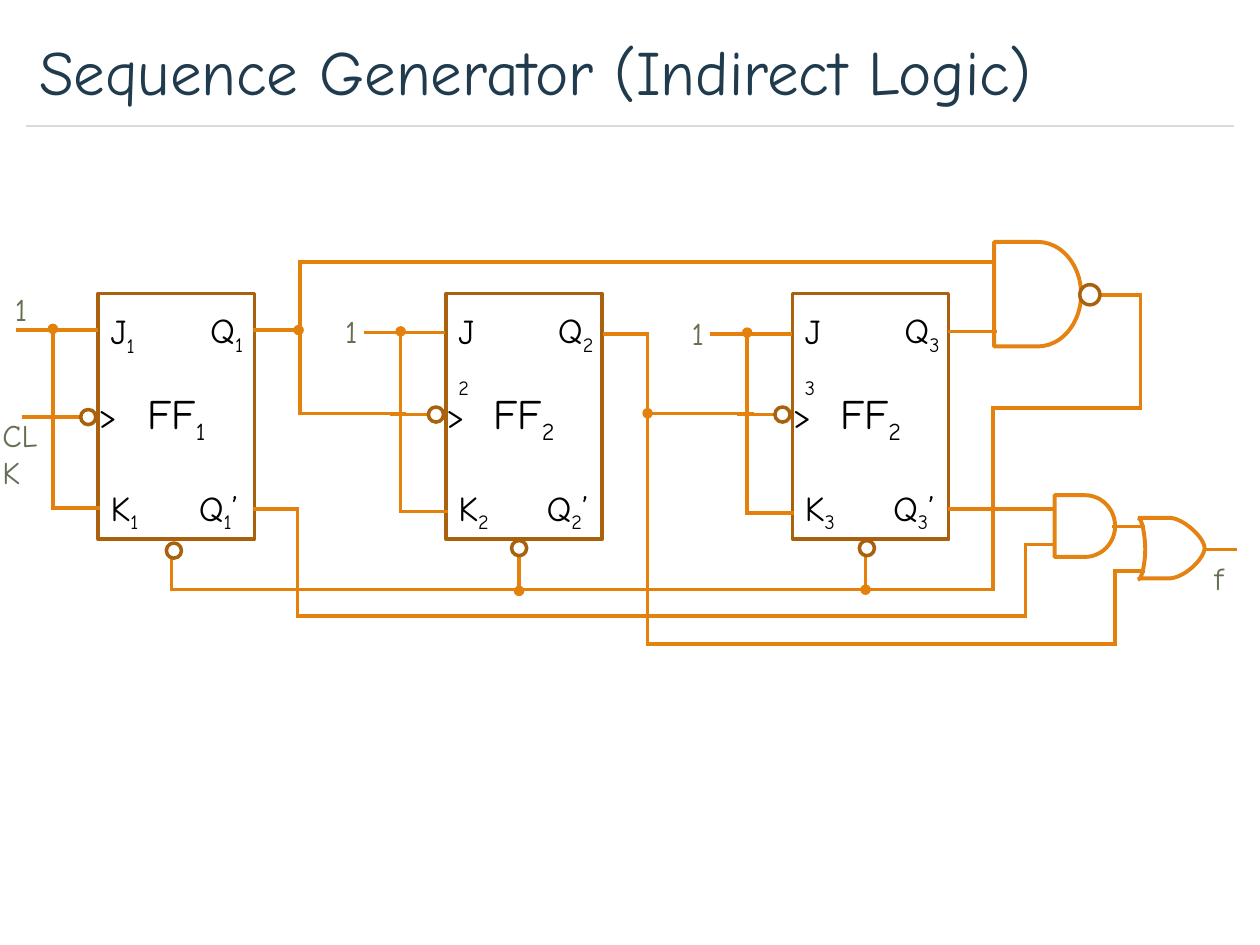
from pptx import Presentation
from pptx.dml.color import RGBColor
from pptx.enum.shapes import MSO_CONNECTOR, MSO_SHAPE
from pptx.enum.text import MSO_ANCHOR, PP_ALIGN
from pptx.oxml.ns import qn
from pptx.util import Cm, Pt
from lxml import etree

LINE = MSO_CONNECTOR.STRAIGHT
RECT, OVAL, GATE = MSO_SHAPE.RECTANGLE, MSO_SHAPE.OVAL, MSO_SHAPE.FLOWCHART_DELAY
MID, LEFT, CENTER = MSO_ANCHOR.MIDDLE, PP_ALIGN.LEFT, PP_ALIGN.CENTER

THEME = {
    "font": "Comic Neue",
    "title": "203A4E", "rule": "D9D9D9", "ink": "000000", "note": "637052",
    "wire": "E4810C", "gate": "E48312", "edge": "A9610D", "white": "FFFFFF",
    "head": 36, "name": 24, "pin": 20, "label": 18,
    "thin": 0.75, "line": 2, "bold": 2.25,
}

# Content: all places are in grid units of one inch
UNIT = 2.54
TITLE = "Sequence Generator (Indirect Logic)"

# left, pin number, name number, J wire, K wire, clock, clock wire start, reset bubble
FLIPS = [
    (0.78, "1", "1", 2.62, 4.03, 3.31, 0.19, (1.32, 4.31)),
    (3.54, "2", "2", 2.64, 4.06, 3.29, 3.11, (4.06, 4.29)),
    (6.29, "3", "2", 2.65, 4.07, 3.29, 5.86, (6.82, 4.29)),
]
# letter, numbered, suffix, offset from block, top, width, wrap
PINS = [
    ("J", True, "", 0, 2.41, 0.39, True),
    ("Q", True, "", 0.79, 2.4, 0.49, False),
    (">", False, "", -0.1, 3.07, 0.34, False),
    ("K", True, "", 0, 3.81, 0.44, False),
    ("Q", True, "’", 0.7, 3.81, 0.56, False),
]
NOTES = [
    ("1", 0.02, 2.25, 0.33, False), ("1", 2.64, 2.43, 0.33, False),
    ("1", 5.39, 2.44, 0.33, False), ("CLK", -0.08, 3.25, 0.58, True),
    ("f", 9.54, 4.39, 0.28, False),
]
# corner points, dot at the last point
WIRES = [
    ([(2.02, 2.62), (2.37, 2.62)], True),
    ([(7.88, 2.08), (2.38, 2.08), (2.38, 3.28), (3.21, 3.28)], False),
    ([(4.8, 2.65), (5.14, 2.65), (5.14, 5.11), (8.85, 5.11),
      (8.85, 4.53), (9.07, 4.53)], False),
    ([(5.97, 3.28), (5.14, 3.28)], True),
    ([(7.54, 2.63), (7.9, 2.63)], False),
    ([(8.71, 2.34), (9.05, 2.34), (9.05, 3.24), (7.88, 3.24),
      (7.88, 4.68), (1.36, 4.68), (1.36, 4.41)], False),
    ([(4.12, 4.41), (4.12, 4.69)], True),
    ([(6.87, 4.4), (6.87, 4.68)], True),
    ([(2.02, 4.04), (2.36, 4.04), (2.36, 4.89), (8.14, 4.89),
      (8.14, 4.32), (8.37, 4.32)], False),
    ([(7.54, 4.04), (8.37, 4.04)], False),
    ([(8.84, 4.18), (9.07, 4.18)], False),
    ([(9.57, 4.36), (9.8, 4.36)], False),
]
GATES = [(7.89, 1.92, 0.69, 0.83), (8.37, 3.93, 0.48, 0.49)]
# OR gate outlines: start, then straight points or curves of three points
CURVES = [
    [(9.04, 4.11), [(9.29, 4.11)], [(9.4, 4.12), (9.56, 4.27), (9.56, 4.35)],
     [(9.56, 4.43), (9.41, 4.58), (9.29, 4.59)], [(9.04, 4.59)]],
    [(9.03, 4.6), [(9.07, 4.6), (9.09, 4.44), (9.09, 4.36)],
     [(9.09, 4.28), (9.07, 4.11), (9.03, 4.11)]],
]

deck = Presentation()
deck.slide_width, deck.slide_height = Cm(10 * UNIT), Cm(7.5 * UNIT)
slide = deck.slides.add_slide(deck.slide_layouts[5])
shapes = slide.shapes


def cm(*vals):
    return [Cm(val * UNIT) for val in vals]


def hue(key):
    return RGBColor.from_string(THEME[key])


def style(run, size, color):
    run.font.name, run.font.size = THEME["font"], Pt(THEME[size])
    run.font.color.rgb = hue(color)


def write(para, parts, size, color):
    """Set runs; the second one is a subscript."""
    for i, part in enumerate(parts):
        run = para.add_run()
        run.text = part
        style(run, size, color)
        if i == 1:
            run.font._element.set("baseline", "-25000")


def label(parts, x, y, w, h, wrap, size, color):
    frame = shapes.add_textbox(*cm(x, y, w, h)).text_frame
    frame.word_wrap = wrap
    write(frame.paragraphs[0], parts, size, color)


def draw(shape, color, width, fill=None):
    shape.shadow.inherit = False
    shape.line.color.rgb, shape.line.width = hue(color), Pt(THEME[width])
    if fill:
        shape.fill.solid()
        shape.fill.fore_color.rgb = hue(fill)
    else:
        shape.fill.background()


def link(start, end, color="wire", width="line", dot=False):
    wire = shapes.add_connector(LINE, *cm(*start, *end))
    wire.line.color.rgb, wire.line.width = hue(color), Pt(THEME[width])
    props = wire._element.spPr
    etree.SubElement(props, qn("a:effectLst"))
    edge = props.find(qn("a:ln"))
    edge.set("cap", "sq")
    if dot:
        etree.SubElement(edge, qn("a:tailEnd")).set("type", "oval")


def chain(points, dot=False):
    last = len(points) - 2
    for i, (start, end) in enumerate(zip(points, points[1:])):
        link(start, end, dot=dot and i == last)


def ring(x, y, size=0.12):
    draw(shapes.add_shape(OVAL, *cm(x, y, size, size)), "edge", "line", "white")


def bend(start, ctrl, steps=12):
    """Points along a cubic curve."""
    pts = [start, *ctrl]
    for i in range(1, steps + 1):
        t = i / steps
        mix = ((1 - t) ** 3, 3 * t * (1 - t) ** 2, 3 * t * t * (1 - t), t ** 3)
        yield tuple(sum(m * p[axis] for m, p in zip(mix, pts)) for axis in (0, 1))


# Title and rule
link((0.21, 1), (9.79, 1), "rule", "thin")
title = shapes.title
title.left, title.top, title.width, title.height = cm(0.21, 0.12, 9.58, 0.88)
title.text_frame.text = TITLE
title.text_frame.vertical_anchor = MID
title.text_frame.paragraphs[0].alignment = LEFT
style(title.text_frame.paragraphs[0].runs[0], "head", "title")

# Flip-flops with their pins, inputs and clocks
for left, num, name, top, low, clock, start, reset in FLIPS:
    box = shapes.add_shape(RECT, *cm(left, 2.33, 1.24, 1.95))
    draw(box, "edge", "line")
    box.text_frame.vertical_anchor = MID
    para = box.text_frame.paragraphs[0]
    para.alignment = CENTER
    write(para, ["FF", name], "name", "ink")
    for pin, sub, tail, dx, y, w, wrap in PINS:
        parts = [part for part in (pin, num if sub else "", tail) if part]
        label(parts, left + dx, y, w, 0.44, wrap, "pin", "ink")
    link((start, clock), (left - 0.14, clock))
    ring(left - 0.14, clock - 0.06)
    link((left - 0.64, top), (left - 0.02, top))
    tie = left - 0.36
    chain([(left, low), (tie, low), (tie, top - 0.01)], True)

# Wires
for points, dot in WIRES:
    chain(points, dot)

# Gates and bubbles
for place in GATES:
    draw(shapes.add_shape(GATE, *cm(*place)), "gate", "bold")
for start, *parts in CURVES:
    points = [start]
    for part in parts:
        points += part if len(part) == 1 else bend(points[-1], part)
    pen = shapes.build_freeform(*cm(*start), scale=1.0)
    pen.add_line_segments([cm(*point) for point in points[1:]], close=False)
    draw(pen.convert_to_shape(), "gate", "bold")
ring(8.57, 2.26, 0.16)
for *_, reset in FLIPS:
    ring(*reset)

# Input and output labels
for text, x, y, w, wrap in NOTES:
    label([text], x, y, w, 0.4, wrap, "label", "note")

deck.save("out.pptx")
